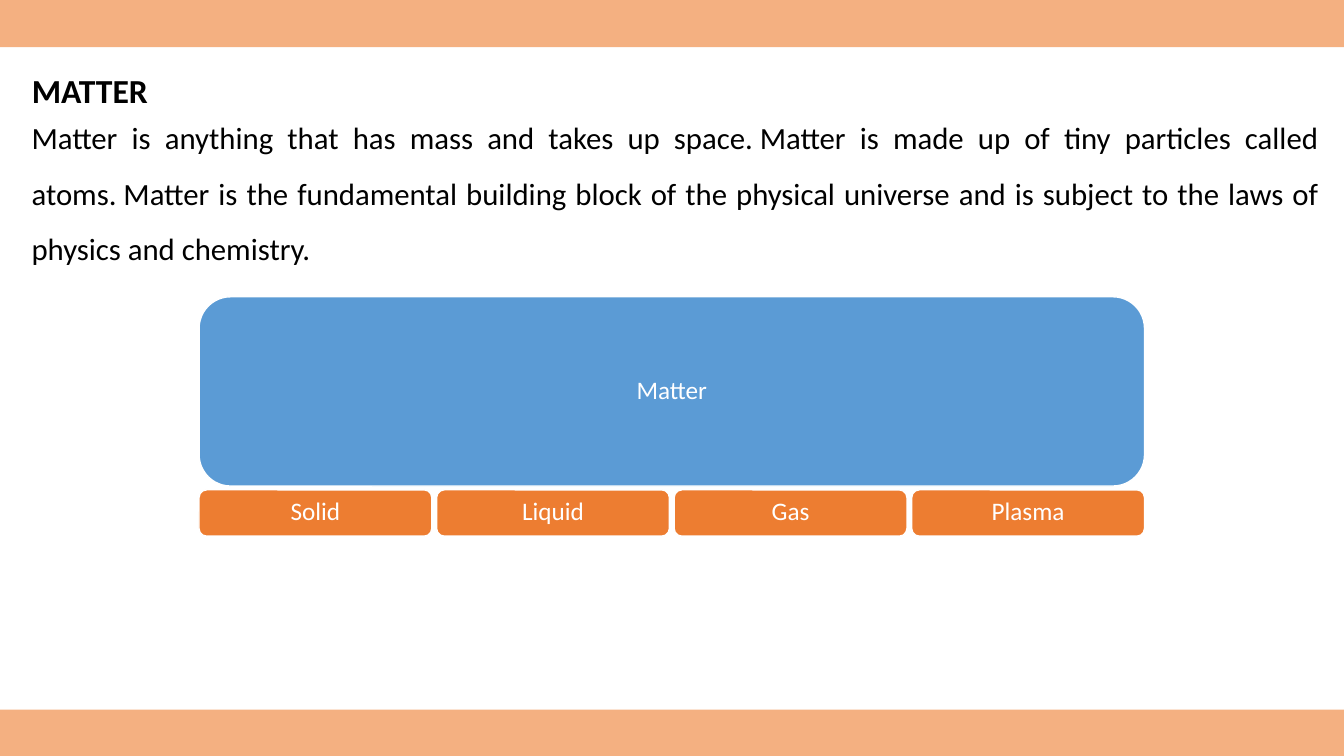
from pptx import Presentation
from pptx.dml.color import RGBColor
from pptx.enum.shapes import MSO_SHAPE
from pptx.enum.text import MSO_ANCHOR, MSO_AUTO_SIZE, PP_ALIGN
from pptx.util import Pt

RECTANGLE, ROUNDED = MSO_SHAPE.RECTANGLE, MSO_SHAPE.ROUNDED_RECTANGLE
LEFT, CENTER, JUSTIFY = PP_ALIGN.LEFT, PP_ALIGN.CENTER, PP_ALIGN.JUSTIFY
TOP, MIDDLE = MSO_ANCHOR.TOP, MSO_ANCHOR.MIDDLE
NO_AUTOFIT = MSO_AUTO_SIZE.NONE
TITLE_ONLY = 5
HARD_SPACE = chr(160)  # keeps neighbouring sentences on one line

COLORS = {"band": "F4B081", "matter": "5B9BD5", "state": "ED7D31",
          "white": "FFFFFF", "black": "000000"}
SLIDE_WIDTH, SLIDE_HEIGHT = 960, 540
BAND_HEIGHT = 33.8
TEXT_LEFT = 15.5
CHART_LEFT, CHART_WIDTH, STATE_GAP = 142.2, 675.36, 3.4


def write(shape, text, size, color, align, anchor, spacing=1.0, bold=False):
    frame = shape.text_frame
    frame.text = text
    frame.word_wrap = True
    frame.auto_size = NO_AUTOFIT
    frame.vertical_anchor = anchor
    para = frame.paragraphs[0]
    para.alignment = align
    para.line_spacing = spacing
    font = para.runs[0].font
    font.name, font.size, font.bold = "Calibri", Pt(size), bold
    font.color.rgb = RGBColor.from_string(COLORS[color])


def add_block(page, kind, left, top, width, height, color):
    block = page.shapes.add_shape(kind, Pt(left), Pt(top), Pt(width), Pt(height))
    block.shadow.inherit = False
    block.fill.solid()
    block.fill.fore_color.rgb = RGBColor.from_string(COLORS[color])
    block.line.fill.background()
    return block


deck = Presentation()
deck.slide_width, deck.slide_height = Pt(SLIDE_WIDTH), Pt(SLIDE_HEIGHT)
page = deck.slides.add_slide(deck.slide_layouts[TITLE_ONLY])

# Bands along the top and bottom edges
for top in (0, 506.9):
    add_block(page, RECTANGLE, 0, top, SLIDE_WIDTH, BAND_HEIGHT, "band")

# Title
title = page.shapes.title
title.left, title.top, title.width, title.height = Pt(TEXT_LEFT), Pt(46.4), Pt(139.68), Pt(36)
write(title, "MATTER", 24, "black", LEFT, TOP, bold=True)

# Definition
sentences = [
    "Matter is anything that has mass and takes up space.",
    "Matter is made up of tiny particles called atoms.",
    "Matter is the fundamental building block of the physical universe "
    "and is subject to the laws of physics and chemistry.",
]
definition = page.shapes.add_textbox(Pt(TEXT_LEFT), Pt(68.4), Pt(933.84), Pt(128.88))
write(definition, HARD_SPACE.join(sentences), 22, "black", JUSTIFY, TOP, spacing=1.5)

# Matter above its four states
states = ["Solid", "Liquid", "Gas", "Plasma"]
state_width = (CHART_WIDTH - STATE_GAP * (len(states) - 1)) / len(states)
blocks = [("Matter", CHART_LEFT, 212, CHART_WIDTH, 135.2, "matter")]
for index, state in enumerate(states):
    left = CHART_LEFT + index * (state_width + STATE_GAP)
    blocks.append((state, left, 349.9, state_width, 33.1, "state"))

for label, left, top, width, height, color in blocks:
    block = add_block(page, ROUNDED, left, top, width, height, color)
    block.line.color.rgb = RGBColor.from_string(COLORS["white"])
    block.line.width = Pt(1)
    write(block, label, 18, "white", CENTER, MIDDLE, spacing=0.85)

deck.save("out.pptx")
